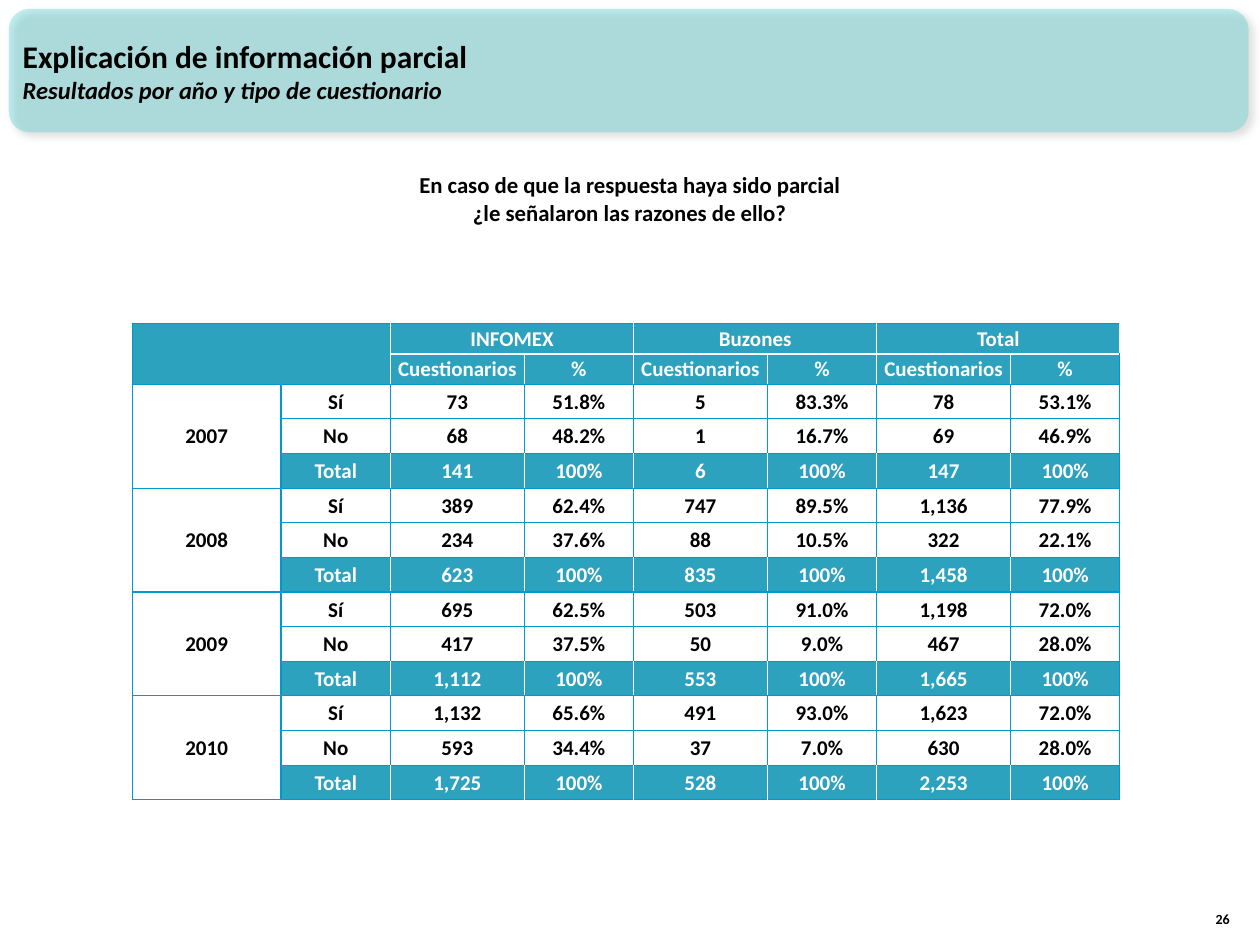
from lxml import etree
from pptx import Presentation
from pptx.dml.color import RGBColor
from pptx.enum.shapes import MSO_SHAPE
from pptx.enum.text import MSO_ANCHOR, MSO_AUTO_SIZE, PP_ALIGN
from pptx.oxml.ns import qn
from pptx.util import Inches, Pt

ROUND = MSO_SHAPE.ROUNDED_RECTANGLE
MIDDLE, BOTTOM = MSO_ANCHOR.MIDDLE, MSO_ANCHOR.BOTTOM
LEFT, CENTER, RIGHT = PP_ALIGN.LEFT, PP_ALIGN.CENTER, PP_ALIGN.RIGHT
FONT = "Calibri"
BLACK, WHITE, TEAL, BLUE, AQUA = "000000", "FFFFFF", "2DA2BF", "0099CC", "33CCCC"

GROUPS = ["INFOMEX", "Buzones", "Total"]
ANSWERS = ["Sí", "No", "Total"]
YEARS = {
    "2007": ["73 51.8% 5 83.3% 78 53.1%",
             "68 48.2% 1 16.7% 69 46.9%",
             "141 100% 6 100% 147 100%"],
    "2008": ["389 62.4% 747 89.5% 1,136 77.9%",
             "234 37.6% 88 10.5% 322 22.1%",
             "623 100% 835 100% 1,458 100%"],
    "2009": ["695 62.5% 503 91.0% 1,198 72.0%",
             "417 37.5% 50 9.0% 467 28.0%",
             "1,112 100% 553 100% 1,665 100%"],
    "2010": ["1,132 65.6% 491 93.0% 1,623 72.0%",
             "593 34.4% 37 7.0% 630 28.0%",
             "1,725 100% 528 100% 2,253 100%"],
}
COLS = [1.18, 0.87] + [1.06, 0.87] * len(GROUPS)
HEAD = 2
HEAD_H, BODY_H = 0.24, 3.3 / 12


def color(value):
    return RGBColor.from_string(value)


def add_node(parent, tag, **attrs):
    return etree.SubElement(parent, qn(tag), attrs)


def style(para, size, align, tint=BLACK, italic=False):
    para.alignment = align
    for run in para.runs:
        font = run.font
        font.name, font.size = FONT, Pt(size)
        font.bold, font.italic = True, italic
        font.color.rgb = color(tint)


def add_bar(slide):
    """Add the translucent title band with its soft shadow, behind the rest."""
    bar = slide.shapes.add_shape(
        ROUND, Inches(0.07), Inches(0.07), Inches(9.84), Inches(0.98))
    bar.fill.solid()
    bar.fill.fore_color.rgb = color(AQUA)
    bar.line.fill.background()
    bar.shadow.inherit = False
    props = bar._element.spPr
    add_node(props.find(".//" + qn("a:srgbClr")), "a:alpha", val="30000")
    shade = add_node(props.find(qn("a:effectLst")), "a:outerShdw",
                     blurRad=str(Pt(4)), dist=str(Pt(3)), dir="2700000",
                     algn="tl", rotWithShape="0")
    tint = add_node(shade, "a:srgbClr", val=BLACK)
    add_node(tint, "a:alpha", val="40000")
    slide.shapes._spTree.insert(2, bar._element)


def set_title(slide):
    title = slide.shapes.title
    title.left, title.top = Inches(0.08), Inches(0.09)
    title.width, title.height = Inches(9.17), Inches(0.94)
    frame = title.text_frame
    frame.text = ("Explicación de información parcial\n"
                  "Resultados por año y tipo de cuestionario")
    frame.vertical_anchor = MIDDLE
    frame.auto_size = MSO_AUTO_SIZE.NONE
    head, sub = frame.paragraphs
    style(head, 18, LEFT)
    style(sub, 14, LEFT, italic=True)


def add_text(slide, box, text, size, align, anchor=None):
    frame = slide.shapes.add_textbox(*map(Inches, box)).text_frame
    frame.word_wrap = True
    frame.text = text
    if anchor is not None:
        frame.vertical_anchor = anchor
    for para in frame.paragraphs:
        style(para, size, align)


def set_edges(cell, tints):
    """Draw the left, right, top and bottom borders, in that order."""
    props = cell._tc.get_or_add_tcPr()
    for i, (side, tint) in enumerate(zip("LRTB", tints)):
        line = etree.Element(qn("a:ln" + side), w=str(Pt(0.75)))
        fill = add_node(line, "a:solidFill")
        add_node(fill, "a:srgbClr", val=tint)
        props.insert(i, line)


def format_cell(cell, row, col):
    head = row < HEAD
    dark = head or (col > 0 and (row - HEAD) % 3 == 2)
    cell.vertical_anchor = MIDDLE
    cell.margin_left = cell.margin_right = cell.margin_top = Inches(0.01)
    cell.margin_bottom = 0
    para = cell.text_frame.paragraphs[0]
    style(para, 12, CENTER, WHITE if dark else BLACK)
    if not para.runs:
        para._p.get_or_add_endParaRPr().set("sz", "1200")
    if dark:
        cell.fill.solid()
        cell.fill.fore_color.rgb = color(TEAL)
    else:
        cell.fill.background()
    data = head and col > 1
    rules = [dark and col > 1, dark and 0 < col < len(COLS) - 1,
             data and row == 1, data and row == 0]
    set_edges(cell, [WHITE if rule else BLUE for rule in rules])


def table_rows():
    top = ["", ""] + [text for name in GROUPS for text in (name, "")]
    yield top
    yield ["", ""] + ["Cuestionarios", "%"] * len(GROUPS)
    for year, lines in YEARS.items():
        for i, (answer, line) in enumerate(zip(ANSWERS, lines)):
            yield [year if i == 0 else "", answer] + line.split()


def add_grid(slide):
    rows = list(table_rows())
    tall = HEAD * HEAD_H + (len(rows) - HEAD) * BODY_H
    table = slide.shapes.add_table(
        len(rows), len(COLS), Inches(1.05), Inches(2.57),
        Inches(sum(COLS)), Inches(tall)).table
    table.first_row = table.horz_banding = False
    for col, width in zip(table.columns, COLS):
        col.width = Inches(width)
    for r, texts in enumerate(rows):
        table.rows[r].height = Inches(HEAD_H if r < HEAD else BODY_H)
        for c, text in enumerate(texts):
            cell = table.cell(r, c)
            cell.text = text
            format_cell(cell, r, c)
    table.cell(0, 0).merge(table.cell(1, 1))
    for c in range(2, len(COLS), 2):
        table.cell(0, c).merge(table.cell(0, c + 1))
    for r in range(HEAD, len(rows), len(ANSWERS)):
        table.cell(r, 0).merge(table.cell(r + 2, 0))


def main():
    deck = Presentation()
    deck.slide_width, deck.slide_height = Inches(10), Inches(7.5)
    slide = deck.slides.add_slide(deck.slide_layouts[5])
    add_bar(slide)
    set_title(slide)
    add_text(slide, (9.46, 7.01, 0.4, 0.4), "26", 8, RIGHT, BOTTOM)
    add_text(slide, (0.89, 1.31, 8.21, 0.54),
             "En caso de que la respuesta haya sido parcial\n"
             "¿le señalaron las razones de ello?", 13, CENTER)
    add_grid(slide)
    deck.save("out.pptx")


if __name__ == "__main__":
    main()
